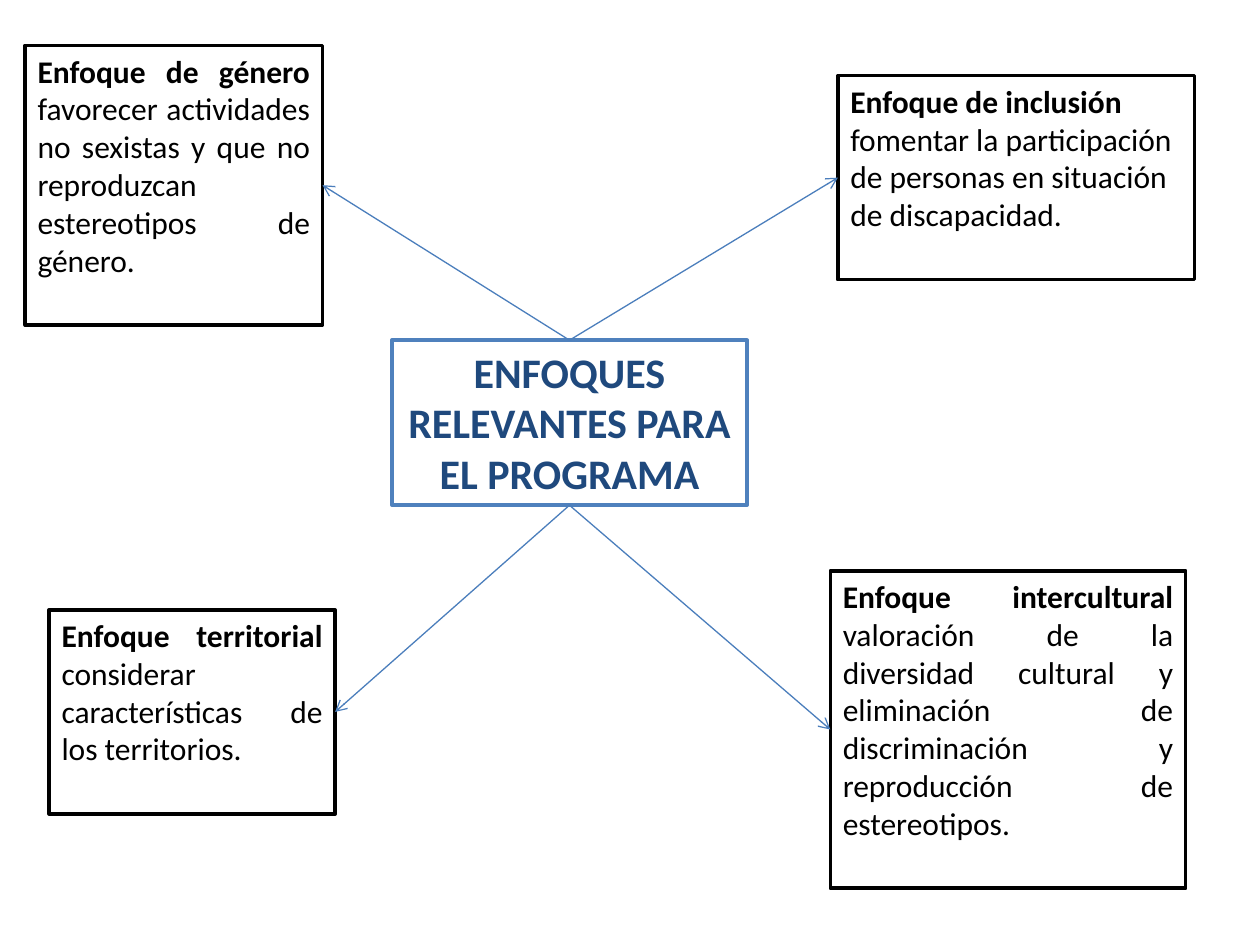
from pptx import Presentation
from pptx.dml.color import RGBColor
from pptx.enum.shapes import MSO_CONNECTOR as Link, MSO_SHAPE as Shape
from pptx.enum.text import MSO_ANCHOR as Anchor, MSO_AUTO_SIZE as Fit, PP_ALIGN as Align
from pptx.oxml.ns import qn
from pptx.util import Inches, Pt
from lxml import etree

WHITE = RGBColor(0xFF, 0xFF, 0xFF)
BLACK = RGBColor(0, 0, 0)
BLUE = RGBColor(0x4F, 0x81, 0xBD)
NAVY = RGBColor(0x1F, 0x49, 0x7D)
ARROW = RGBColor(0x4B, 0x7E, 0xBC)

TOP, LEFT, BOTTOM, RIGHT = range(4)  # connection sites of a rectangle

HUB = (3.11, 2.7, 2.82, 1.31)
# box, heading, body, alignment, hub site, card site
CARDS = [
    ((0.2, 0.36, 2.36, 2.22), "Enfoque de género ",
     "favorecer actividades no sexistas y que no reproduzcan estereotipos de género.",
     Align.JUSTIFY, TOP, RIGHT),
    ((0.39, 4.84, 2.27, 1.62), "Enfoque territorial ",
     "considerar características de los territorios.",
     Align.JUSTIFY, BOTTOM, RIGHT),
    ((6.59, 4.53, 2.82, 2.52), "Enfoque intercultural ",
     "valoración de la diversidad cultural y eliminación de discriminación "
     "y reproducción de estereotipos.",
     Align.JUSTIFY, BOTTOM, LEFT),
    ((6.65, 0.6, 2.83, 1.62), "Enfoque de inclusión ",
     "fomentar la participación de personas en situación de discapacidad.",
     Align.LEFT, TOP, LEFT),
]


def add_text(para, text, size=18, color=BLACK, bold=False):
    run = para.add_run()
    run.text = text
    font = run.font
    font.name, font.size, font.bold = "Calibri", Pt(size), bold
    font.color.rgb = color


def frame(shape, box, line, align):
    """Place and outline a shape, and return its first paragraph."""
    shape.left, shape.top, shape.width, shape.height = map(Inches, box)
    shape.fill.solid()
    shape.fill.fore_color.rgb = WHITE
    shape.line.color.rgb = line
    shape.line.width = Pt(2)
    text = shape.text_frame
    text.word_wrap = True
    text.auto_size = Fit.NONE
    text.vertical_anchor = Anchor.TOP
    para = text.paragraphs[0]
    para.alignment = align
    return para


def add_hub(slide, box):
    hub = slide.shapes.title
    para = frame(hub, box, BLUE, Align.CENTER)
    add_text(para, "ENFOQUES RELEVANTES PARA EL PROGRAMA",
             size=24, color=NAVY, bold=True)
    return hub


def add_card(slide, box, head, body, align):
    card = slide.shapes.add_shape(Shape.RECTANGLE, *map(Inches, box))
    card.shadow.inherit = False
    para = frame(card, box, BLACK, align)
    add_text(para, head, bold=True)
    add_text(para, body)
    return card


def add_arrow(slide, hub, start, card, end):
    arrow = slide.shapes.add_connector(Link.STRAIGHT, 0, 0, 0, 0)
    arrow.begin_connect(hub, start)
    arrow.end_connect(card, end)
    arrow.line.color.rgb = ARROW
    arrow.line.width = Pt(0.75)
    etree.SubElement(arrow.line._get_or_add_ln(), qn("a:tailEnd"), type="arrow")
    etree.SubElement(arrow._element.spPr, qn("a:effectLst"))


def main():
    deck = Presentation()
    deck.slide_width, deck.slide_height = Inches(10), Inches(7.5)
    slide = deck.slides.add_slide(deck.slide_layouts[5])
    hub = add_hub(slide, HUB)
    cards = [add_card(slide, *card[:4]) for card in CARDS]
    for card, (*_, start, end) in zip(cards, CARDS):
        add_arrow(slide, hub, start, card, end)
    deck.save("out.pptx")


if __name__ == "__main__":
    main()
